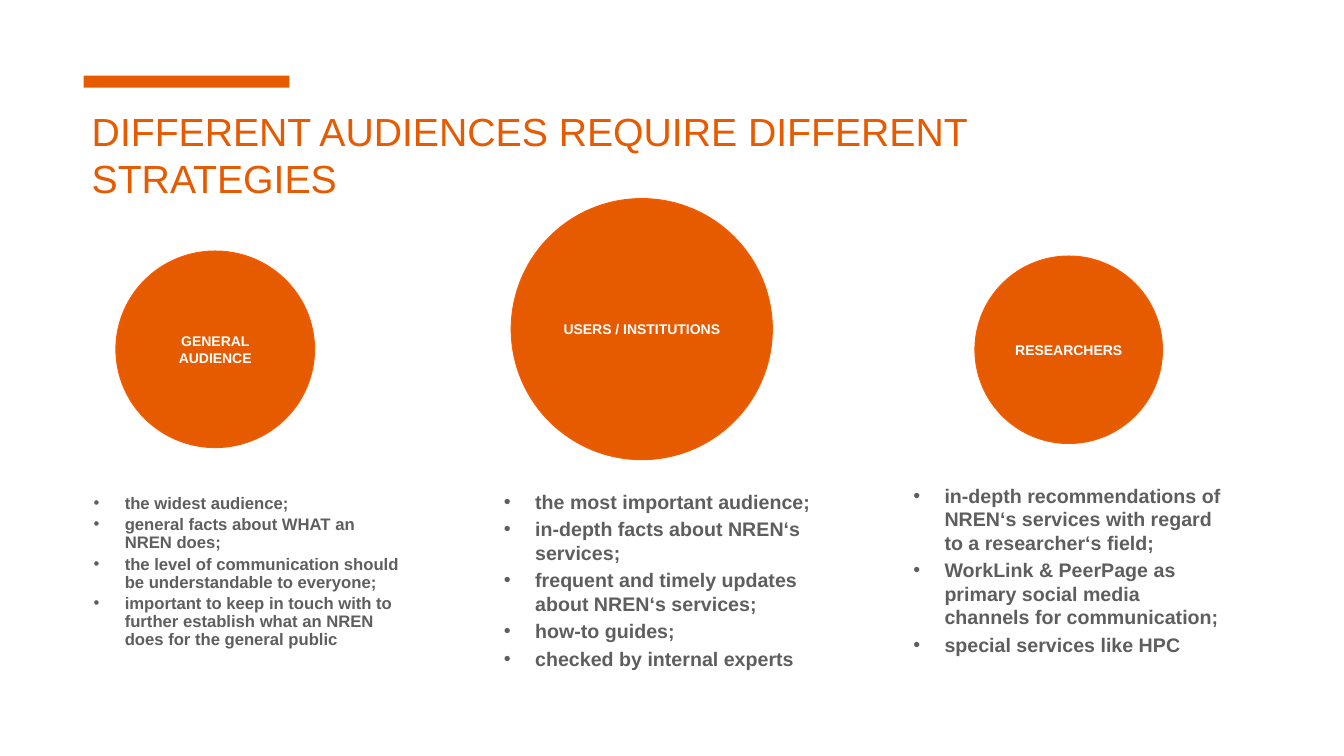
from dataclasses import dataclass
from typing import Optional

from lxml.etree import SubElement
from pptx import Presentation
from pptx.dml.color import RGBColor
from pptx.enum.shapes import MSO_SHAPE as SHAPE
from pptx.enum.text import MSO_ANCHOR as ANCHOR, PP_ALIGN as ALIGN
from pptx.oxml.ns import qn
from pptx.util import Inches, Pt


@dataclass(frozen=True)
class Theme:
    font: str = "Arial"
    accent: str = "E65A00"
    outline: str = "F95B00"
    body: str = "5E5E5E"
    on_accent: str = "FFFFFF"
    title_size: float = 28
    label_size: float = 10
    body_size: float = 14
    small_size: float = 11.9


@dataclass(frozen=True)
class Box:
    left: float
    top: float
    width: float
    height: float

    def inches(self) -> list:
        return [Inches(v) for v in (self.left, self.top, self.width, self.height)]


@dataclass(frozen=True)
class Audience:
    label: str
    circle: Box
    points: list
    text_box: Box
    size: float
    line_spacing: Optional[float] = None


THEME = Theme()
TEXT_WIDTH = 3.27
BULLET_INDENT = 0.31

AUDIENCES = [
    Audience(
        "GENERAL AUDIENCE", Box(1.15, 2.49, 1.97, 1.95),
        ["the widest audience;",
         "general facts about WHAT an NREN does;",
         "the level of communication should be understandable to everyone;",
         "important to keep in touch with to further establish what an NREN "
         "does for the general public"],
        Box(0.83, 4.86, TEXT_WIDTH, 1.95), THEME.small_size, 0.9),
    Audience(
        "USERS / INSTITUTIONS", Box(5.07, 1.97, 2.59, 2.59),
        ["the most important audience;",
         "in-depth facts about NREN‘s services;",
         "frequent and timely updates about NREN‘s services;",
         "how-to guides;",
         "checked by internal experts"],
        Box(4.9, 4.81, TEXT_WIDTH, 2.06), THEME.body_size),
    Audience(
        "RESEARCHERS", Box(9.67, 2.54, 1.86, 1.86),
        ["in-depth recommendations of NREN‘s services with regard to a "
         "researcher‘s field;",
         "WorkLink & PeerPage as primary social media channels for communication;",
         "special services like HPC"],
        Box(8.96, 4.75, TEXT_WIDTH, 2.06), THEME.body_size),
]


def add_bullet(p) -> None:
    """Give a paragraph a hanging round bullet."""
    pPr = p._p.get_or_add_pPr()
    pPr.set("marL", str(Inches(BULLET_INDENT)))
    pPr.set("indent", str(-Inches(BULLET_INDENT)))
    SubElement(pPr, qn("a:buFont")).set("typeface", THEME.font)
    SubElement(pPr, qn("a:buChar")).set("char", "•")


def write(tf, lines: list, *, size: float, color: str, bold: bool = False,
          align=ALIGN.LEFT, anchor=ANCHOR.TOP, bullets: bool = False,
          line_spacing: Optional[float] = None) -> None:
    """Fill a text frame with one paragraph per line."""
    tf.word_wrap = True
    tf.vertical_anchor = anchor
    for i, line in enumerate(lines):
        p = tf.add_paragraph() if i else tf.paragraphs[0]
        p.alignment = align
        if bullets:
            add_bullet(p)
        if line_spacing:
            p.line_spacing = line_spacing
        if i:
            p.space_before = Pt(round(size * 0.2, 1))
        r = p.add_run()
        r.text = line
        r.font.name = THEME.font
        r.font.size = Pt(size)
        r.font.bold = bold
        r.font.color.rgb = RGBColor.from_string(color)


def add_filled(slide, kind, box: Box, outline: Optional[str] = None):
    """Draw an accent-coloured shape, with an optional outline."""
    sp = slide.shapes.add_shape(kind, *box.inches())
    sp.shadow.inherit = False
    sp.fill.solid()
    sp.fill.fore_color.rgb = RGBColor.from_string(THEME.accent)
    if outline:
        sp.line.color.rgb = RGBColor.from_string(outline)
        sp.line.width = Pt(0.75)
    else:
        sp.line.fill.background()
    return sp


def add_title(slide, text: str) -> None:
    tf = slide.shapes.add_textbox(*Box(0.83, 1.06, 9.21, 1.58).inches()).text_frame
    tf.margin_left = tf.margin_right = Inches(0.08)
    tf.margin_top = tf.margin_bottom = 0
    write(tf, [text], size=THEME.title_size, color=THEME.accent)


def add_audience(slide, audience: Audience) -> None:
    """Draw a labelled circle and the bullet list below it."""
    circle = add_filled(slide, SHAPE.OVAL, audience.circle, THEME.outline)
    write(circle.text_frame, [audience.label], size=THEME.label_size,
          color=THEME.on_accent, bold=True, align=ALIGN.CENTER, anchor=ANCHOR.MIDDLE)
    tb = slide.shapes.add_textbox(*audience.text_box.inches())
    write(tb.text_frame, audience.points, size=audience.size, color=THEME.body,
          bold=True, bullets=True, line_spacing=audience.line_spacing)


def main() -> None:
    prs = Presentation()
    prs.slide_width, prs.slide_height = Inches(13.33), Inches(7.5)
    slide = prs.slides.add_slide(prs.slide_layouts[6])

    # Accent bar and title
    add_filled(slide, SHAPE.RECTANGLE, Box(0.83, 0.75, 2.04, 0.12))
    add_title(slide, "DIFFERENT AUDIENCES REQUIRE DIFFERENT STRATEGIES")

    # Three audience columns
    for audience in AUDIENCES:
        add_audience(slide, audience)

    prs.save("out.pptx")


if __name__ == "__main__":
    main()
